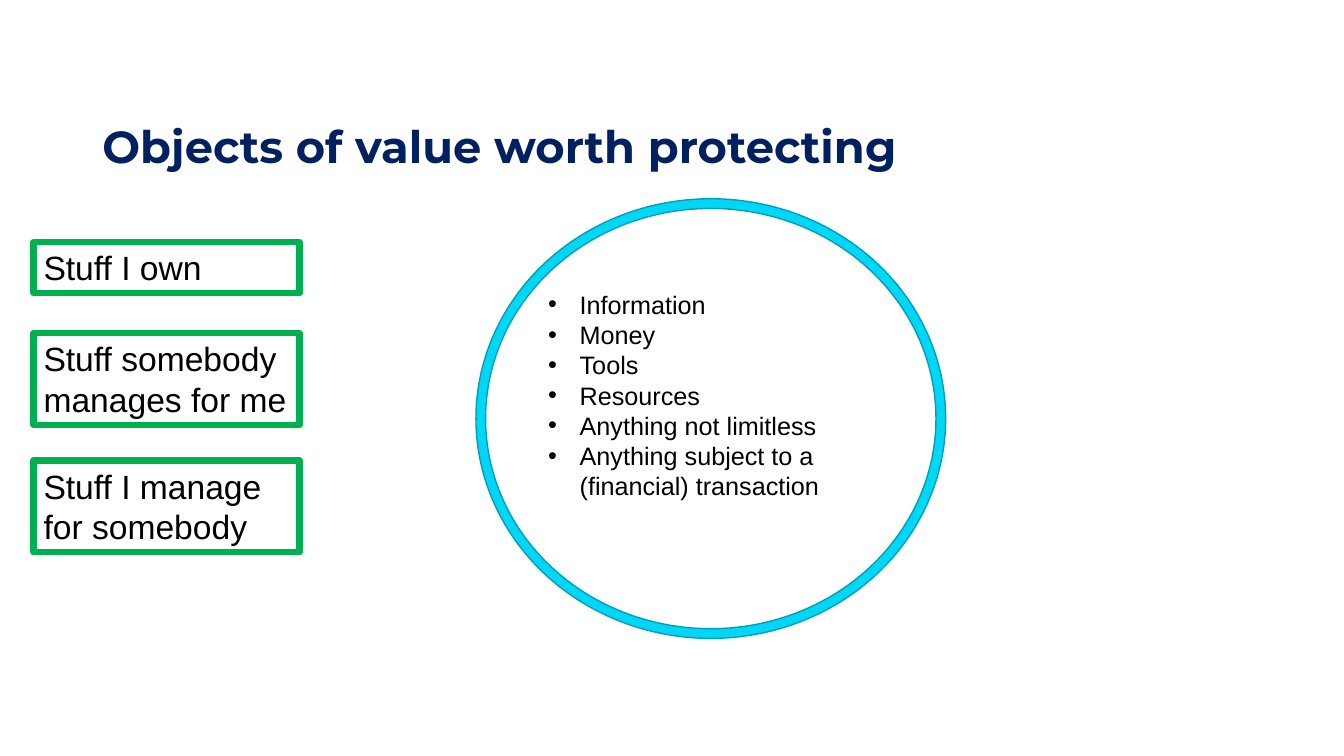
from lxml import etree
from pptx import Presentation
from pptx.dml.color import RGBColor
from pptx.enum import shapes, text
from pptx.oxml import ns
from pptx.util import Pt

NAVY = RGBColor(0x00, 0x20, 0x60)
CYAN = RGBColor(0x00, 0xD7, 0xF7)
TEAL = RGBColor(0x00, 0x9F, 0xB7)
GREEN = RGBColor(0x00, 0xB0, 0x50)
BLACK = RGBColor(0, 0, 0)


def add_text(left, top, width, height, lines, size, color=BLACK, font="Arial", bullet=False):
    """Add a text box with one paragraph per line."""
    box = slide.shapes.add_textbox(Pt(left), Pt(top), Pt(width), Pt(height))
    box.text_frame.word_wrap = True
    box.text_frame.text = "\n".join(lines)
    for paragraph in box.text_frame.paragraphs:
        if bullet:
            properties = paragraph._p.get_or_add_pPr()
            properties.set("marL", str(Pt(22.5)))
            properties.set("indent", str(Pt(-22.5)))
            etree.SubElement(properties, ns.qn("a:buFont"), typeface="Arial")
            etree.SubElement(properties, ns.qn("a:buChar"), char="•")
        paragraph.font.name = font
        paragraph.font.size = Pt(size)
        paragraph.font.color.rgb = color
    return box


presentation = Presentation()
presentation.slide_width = Pt(960)
presentation.slide_height = Pt(540)
slide = presentation.slides.add_slide(presentation.slide_layouts[6])

title = add_text(66, 70.5, 828, 71.5, ["Objects of value worth protecting"], 32, NAVY, "Montserrat")
title.text_frame.vertical_anchor = text.MSO_ANCHOR.MIDDLE
title_paragraph = title.text_frame.paragraphs[0]
title_paragraph.line_spacing = 0.9
title_paragraph.font.bold = True

ring = slide.shapes.add_shape(shapes.MSO_SHAPE.DONUT, Pt(340), Pt(142), Pt(335.5), Pt(314))
ring.adjustments[0] = 0.022
ring.shadow.inherit = False
ring.fill.solid()
ring.fill.fore_color.rgb = CYAN
ring.line.color.rgb = TEAL
ring.line.width = Pt(1)

valuables = [
    "Information",
    "Money",
    "Tools",
    "Resources",
    "Anything not limitless",
    "Anything subject to a (financial) transaction",
]
add_text(384.5, 203, 247, 160, valuables, 18, bullet=True)

ownership_boxes = [
    (173, 36.5, ["Stuff I own"]),
    (238, 65.5, ["Stuff somebody", "manages for me"]),
    (329, 65.5, ["Stuff I manage for somebody"]),
]
for top, height, lines in ownership_boxes:
    box = add_text(24, top, 190, height, lines, 24)
    box.line.color.rgb = GREEN
    box.line.width = Pt(4.5)

presentation.save("out.pptx")
